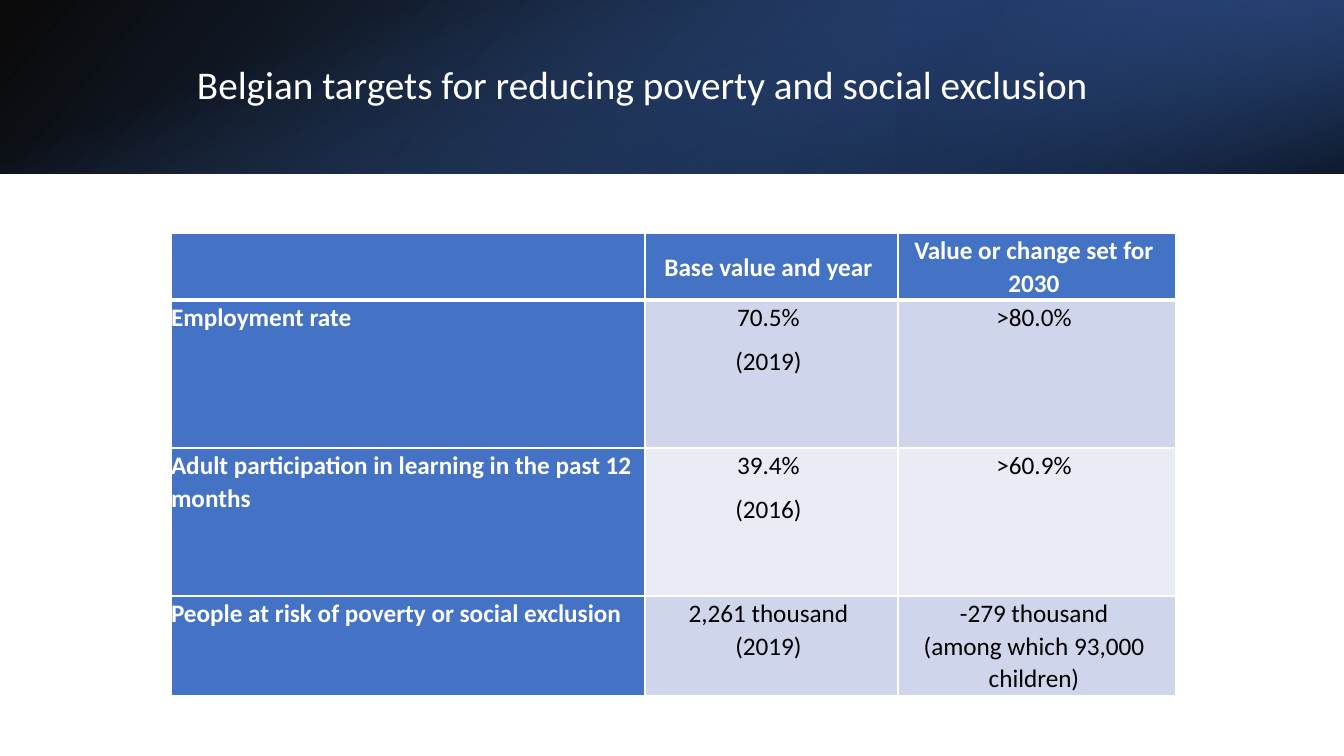
from dataclasses import dataclass

from lxml import etree
from pptx import Presentation
from pptx.dml.color import RGBColor
from pptx.enum.shapes import MSO_SHAPE
from pptx.enum.text import MSO_ANCHOR, PP_ALIGN
from pptx.oxml.ns import qn
from pptx.util import Emu, Pt

RECTANGLE = MSO_SHAPE.RECTANGLE
LEFT, CENTER = PP_ALIGN.LEFT, PP_ALIGN.CENTER
TOP, MIDDLE = MSO_ANCHOR.TOP, MSO_ANCHOR.MIDDLE
TITLE_ONLY = 5
PX_PER_INCH = 100.8


@dataclass(frozen=True)
class Theme:
    font: str = "Calibri"
    title_size: int = 28
    table_size: int = 18
    white: str = "FFFFFF"
    black: str = "000000"
    blue: str = "4472C4"
    deep_blue: str = "2F5597"
    navy: str = "203864"
    odd_row: str = "CFD5EA"
    even_row: str = "E9EBF5"


THEME = Theme()

TITLE = "Belgian targets for reducing poverty and social exclusion"
TARGETS = [
    ["", "Base value and year", "Value or change set for 2030"],
    ["Employment rate", "70.5%\n(2019)", ">80.0%"],
    ["Adult participation in learning in the past 12 months",
     "39.4%\n(2016)", ">60.9%"],
    ["People at risk of poverty or social exclusion",
     "2,261 thousand\v(2019)",
     "-279 thousand\v(among which 93,000 children)"],
]
COLUMN_WIDTHS = [474, 253, 278]
ROW_HEIGHTS = [67, 148, 148, 100]


def px(length):
    return Emu(round(length * 914400 / PX_PER_INCH))


def rgb(value):
    return RGBColor.from_string(value)


def set_all(target, values):
    for attribute, value in values.items():
        setattr(target, attribute, value)


def format_text(frame, size, color, bold, paragraph_format):
    for paragraph in frame.paragraphs:
        set_all(paragraph, paragraph_format)
        set_all(paragraph.font,
                {"name": THEME.font, "size": Pt(size), "bold": bold})
        paragraph.font.color.rgb = rgb(color)


def add_gradient_band(slide, box, stops, angle, rotation=0, flipped=False):
    x, y, width, height = box
    if rotation == 90:
        x, y = x + (width - height) // 2, y + (height - width) // 2
        width, height = height, width
    band = slide.shapes.add_shape(
        RECTANGLE, px(x), px(y), px(width), px(height))
    band.shadow.inherit = False
    band.rotation = rotation
    band.line.fill.background()
    band.fill.gradient()
    band.fill.gradient_angle = 360 - angle
    properties = band._element.spPr
    if flipped:
        properties.find(qn("a:xfrm")).set("flipH", "1")
    for stop, (position, color, _) in zip(band.fill.gradient_stops, stops):
        stop.position = position / 100
        stop.color.rgb = rgb(color)
    for color_node, (_, _, opacity) in zip(
            properties.iter(qn("a:srgbClr")), stops):
        etree.SubElement(color_node, qn("a:alpha"), val=str(opacity * 1000))


def add_header(slide, box):
    x, y, width, height = box
    add_gradient_band(
        slide, box,
        [(0, THEME.black, 96), (100, THEME.deep_blue, 100)],
        140, flipped=True)
    add_gradient_band(
        slide, (x + width * 2 // 3, y, width // 3, height),
        [(19, THEME.navy, 68), (100, THEME.blue, 79)],
        320, rotation=180, flipped=True)
    add_gradient_band(
        slide, box,
        [(23, THEME.blue, 0), (99, THEME.black, 74)],
        340, rotation=90)

    title = slide.shapes.title
    set_all(title, {"left": px(x + 151), "top": px(y + 38),
                    "width": px(1005), "height": px(97)})
    frame = title.text_frame
    frame.text = TITLE
    set_all(frame, {"word_wrap": True, "vertical_anchor": MIDDLE,
                    "margin_left": px(46)})
    format_text(frame, THEME.title_size, THEME.white, False,
                {"alignment": LEFT, "line_spacing": 0.9,
                 "space_after": Pt(6)})
    slide.shapes._spTree.append(title._element)


def add_borders(cell, widths):
    properties = cell._tc.get_or_add_tcPr()
    for side, width in widths.items():
        line = etree.SubElement(
            properties, qn(f"a:ln{side}"), w=str(Pt(width)))
        fill = etree.SubElement(line, qn("a:solidFill"))
        etree.SubElement(fill, qn("a:srgbClr"), val=THEME.white)


def format_cell(cell, text, row, column):
    is_header = row == 0
    is_heading = is_header or column == 0
    body_color = THEME.odd_row if row % 2 else THEME.even_row
    add_borders(cell, {"L": 1, "R": 1, "T": 3 if row == 1 else 1,
                       "B": 3 if is_header else 1})
    cell.fill.solid()
    cell.fill.fore_color.rgb = rgb(THEME.blue if is_heading else body_color)
    set_all(cell, {"margin_left": 0, "margin_top": 0, "margin_bottom": 0,
                   "margin_right": px(6 if column else 0),
                   "vertical_anchor": MIDDLE if is_header else TOP})
    cell.text_frame.text = text
    format_text(cell.text_frame, THEME.table_size,
                THEME.white if is_heading else THEME.black, is_heading,
                {"alignment": CENTER if column else LEFT,
                 "line_spacing": 1.07, "space_after": Pt(8)})


def add_targets_table(slide, box):
    table = slide.shapes.add_table(
        len(TARGETS), len(COLUMN_WIDTHS), *map(px, box)).table
    for column, width in zip(table.columns, COLUMN_WIDTHS):
        column.width = px(width)
    for row, height in zip(table.rows, ROW_HEIGHTS):
        row.height = px(height)
    for row, texts in enumerate(TARGETS):
        for column, text in enumerate(texts):
            format_cell(table.cell(row, column), text, row, column)


def main():
    presentation = Presentation()
    set_all(presentation,
            {"slide_width": px(1344), "slide_height": px(756)})
    slide = presentation.slides.add_slide(
        presentation.slide_layouts[TITLE_ONLY])
    add_header(slide, (0, 0, 1344, 174))
    add_targets_table(
        slide, (171, 233, sum(COLUMN_WIDTHS), sum(ROW_HEIGHTS)))
    presentation.save("out.pptx")


if __name__ == "__main__":
    main()
